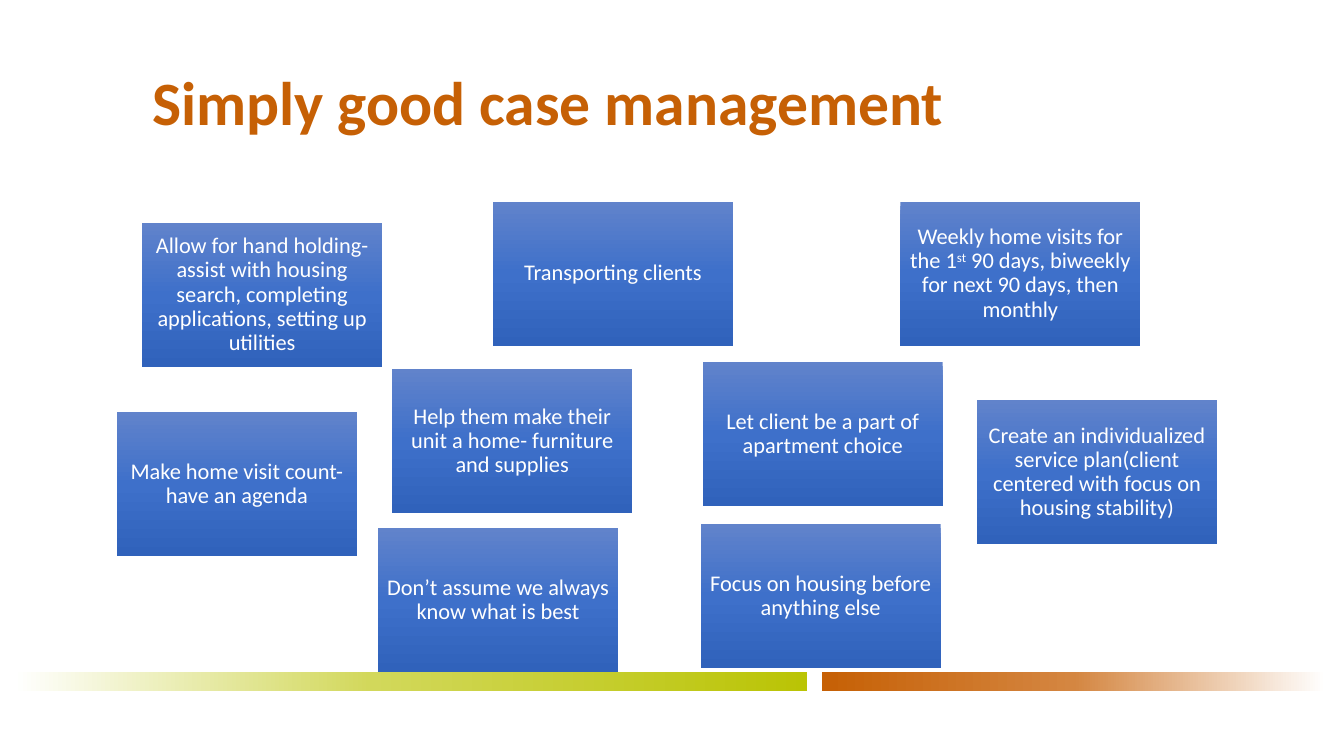
from lxml.etree import SubElement
from pptx import Presentation
from pptx.dml.color import RGBColor
from pptx.enum.shapes import MSO_SHAPE
from pptx.enum.text import MSO_ANCHOR, MSO_AUTO_SIZE, PP_ALIGN
from pptx.oxml.ns import qn
from pptx.util import Inches, Pt

WHITE = RGBColor(0xFF, 0xFF, 0xFF)
ORANGE = RGBColor(0xC6, 0x60, 0x05)
LIGHT_ORANGE = RGBColor(0xD4, 0x86, 0x41)
GREEN = RGBColor(0xBA, 0xC4, 0x05)
LIGHT_GREEN = RGBColor(0xD2, 0xD8, 0x5B)
BLUE_TOP = RGBColor(0x61, 0x83, 0xCB)
BLUE_MIDDLE = RGBColor(0x3E, 0x70, 0xCA)
BLUE_BOTTOM = RGBColor(0x30, 0x62, 0xBB)

FONT = "Calibri"
CARD_WIDTH, CARD_HEIGHT = 2.38, 1.43
CARD_STOPS = [(0, BLUE_TOP), (50, BLUE_MIDDLE), (100, BLUE_BOTTOM)]
DOWNWARD = 270  # gradient angles run counter-clockwise

# left, top, runs as (text, superscript)
CARDS = [
    (1.41, 2.21, [("Allow for hand holding- assist with housing search, "
                   "completing applications, setting up utilities", False)]),
    (4.89, 2, [("Transporting clients", False)]),
    (6.97, 3.59, [("Let client be a part of apartment choice", False)]),
    (8.93, 2, [("Weekly home visits for the 1", False), ("st", True),
               (" 90 days, biweekly for next 90 days, then monthly", False)]),
    (1.16, 4.09, [("Make home visit count- have an agenda", False)]),
    (3.89, 3.66, [("Help them make their unit a home- furniture and supplies", False)]),
    (6.95, 5.2, [("Focus on housing before anything else", False)]),
    (9.69, 3.97, [("Create an individualized service plan(client centered "
                   "with focus on housing stability)", False)]),
    (3.75, 5.24, [("Don’t assume we always know what is best", False)]),
]


class SlideBuilder:
    def __init__(self, slide):
        self.slide = slide

    def add_run(self, p, text, size, color, bold=False, superscript=False):
        r = p.add_run()
        r.text = text
        font = r.font
        font.name, font.size, font.bold = FONT, Pt(size), bold
        font.color.rgb = color
        if superscript:
            r._r.get_or_add_rPr().set("baseline", "30000")

    def title(self, text, left, top, width, height):
        sp = self.slide.shapes.title
        sp.left, sp.top = Inches(left), Inches(top)
        sp.width, sp.height = Inches(width), Inches(height)
        tf = sp.text_frame
        tf.auto_size = MSO_AUTO_SIZE.NONE
        tf.vertical_anchor = MSO_ANCHOR.MIDDLE
        p = tf.paragraphs[0]
        p.alignment = PP_ALIGN.LEFT
        p.line_spacing = 0.9
        self.add_run(p, text, 44, ORANGE, bold=True)

    def gradient_box(self, left, top, width, height, stops, angle=0):
        """Add a borderless rectangle; stops are (percent, color) pairs."""
        sp = self.slide.shapes.add_shape(
            MSO_SHAPE.RECTANGLE, Inches(left), Inches(top), Inches(width), Inches(height))
        sp.shadow.inherit = False
        sp.line.fill.background()
        sp.fill.gradient()
        sp.fill.gradient_angle = angle
        stop_list = sp._element.spPr.find(".//" + qn("a:gsLst"))
        stop_list.clear()
        for percent, color in stops:
            stop = SubElement(stop_list, qn("a:gs"), pos=str(percent * 1000))
            SubElement(stop, qn("a:srgbClr"), val=str(color))
        return sp

    def card(self, left, top, runs):
        sp = self.gradient_box(left, top, CARD_WIDTH, CARD_HEIGHT, CARD_STOPS, DOWNWARD)
        tf = sp.text_frame
        tf.word_wrap = True
        tf.vertical_anchor = MSO_ANCHOR.MIDDLE
        tf.margin_left = tf.margin_right = tf.margin_top = tf.margin_bottom = Inches(0.07)
        p = tf.paragraphs[0]
        p.alignment = PP_ALIGN.CENTER
        p.line_spacing = 0.9
        for text, superscript in runs:
            self.add_run(p, text, 16, WHITE, superscript=superscript)


def main():
    prs = Presentation()
    prs.slide_width, prs.slide_height = Inches(13.33), Inches(7.5)
    builder = SlideBuilder(prs.slides.add_slide(prs.slide_layouts[5]))
    builder.gradient_box(0.14, 6.67, 7.86, 0.19,
                         [(0, WHITE), (45, LIGHT_GREEN), (100, GREEN)])
    builder.gradient_box(8.15, 6.67, 5, 0.19,
                         [(0, ORANGE), (50, LIGHT_ORANGE), (100, WHITE)])
    builder.title("Simply good case management", 1.41, 0.32, 11.5, 1.45)
    for left, top, runs in CARDS:
        builder.card(left, top, runs)
    prs.save("out.pptx")


if __name__ == "__main__":
    main()
